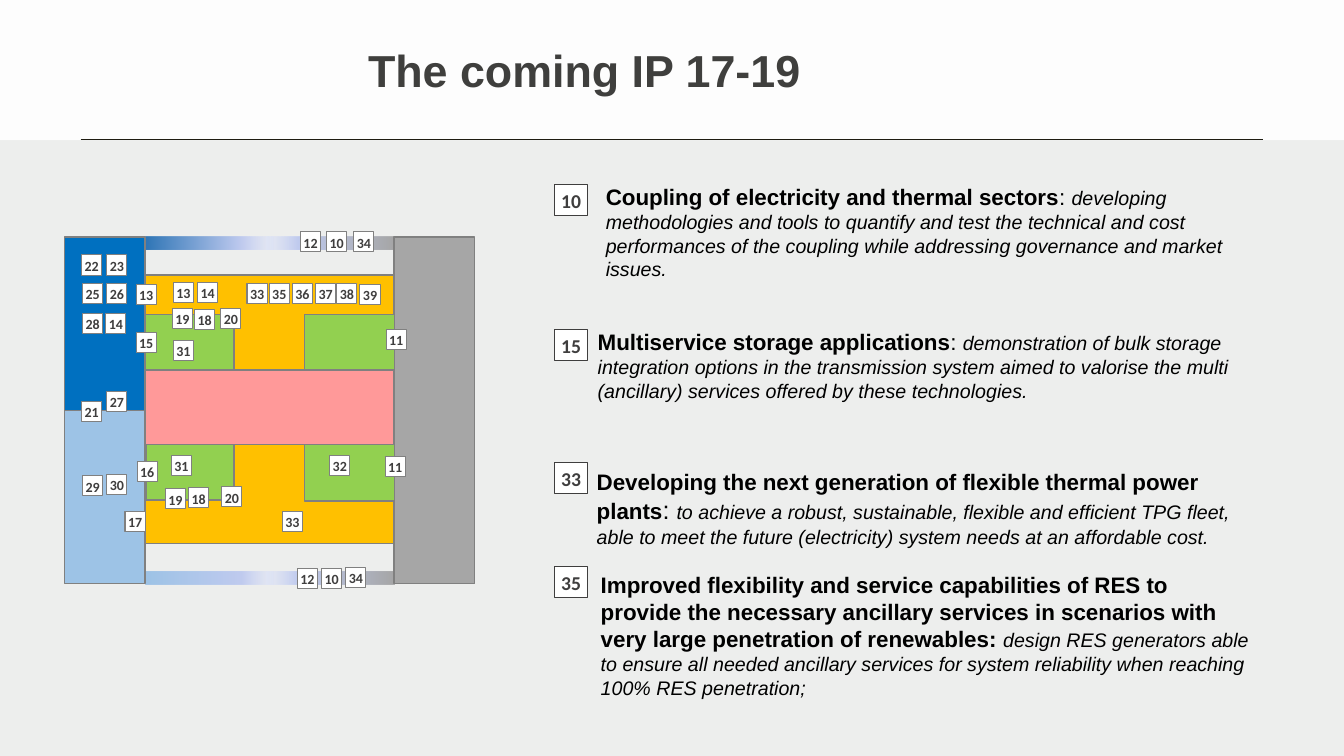
from lxml.etree import SubElement
from pptx import Presentation
from pptx.dml.color import RGBColor
from pptx.enum.shapes import MSO_CONNECTOR as Conn, MSO_SHAPE as Kind
from pptx.enum.text import MSO_ANCHOR as Anchor, MSO_AUTO_SIZE as Fit, PP_ALIGN as Align
from pptx.oxml.ns import qn
from pptx.util import Emu, Pt

SCALE = 9144  # EMU in one px, 100 px to the inch

HUES = {
    "page": "EDEEED", "white": "FFFFFF", "black": "000000", "rule": "1E1C11",
    "title": "3F3F3D", "ink": "3F3E3E", "edge": "808080", "grey": "A6A6A6",
    "blue": "0070C0", "sky": "9DC3E6", "navy": "2E75B6", "amber": "FFC000",
    "pink": "FF9999", "green": "92D050", "mist": "C0CBF0", "haze": "E0E5F7",
}


def px(*nums):
    return [Emu(n * SCALE) for n in nums]


def rgb(hue):
    return RGBColor.from_string(HUES[hue])


class Deck:
    def __init__(self):
        self.prs = Presentation()
        self.prs.slide_width, self.prs.slide_height = px(1333, 750)
        self.slide = self.prs.slides.add_slide(self.prs.slide_layouts[5])
        fill = self.slide.background.fill
        fill.solid()
        fill.fore_color.rgb = rgb("page")

    def box(self, x, y, w, h, hue, edge=None, width=1):
        shape = self.slide.shapes.add_shape(Kind.RECTANGLE, *px(x, y, w, h))
        shape.shadow.inherit = False
        shape.fill.solid()
        shape.fill.fore_color.rgb = rgb(hue)
        if edge:
            shape.line.color.rgb = rgb(edge)
            shape.line.width = Pt(width)
        else:
            shape.line.fill.background()
        return shape

    def band(self, x, y, w, h, hue, alpha):
        shape = self.box(x, y, w, h, hue)
        color = shape._element.spPr.find(f".//{qn('a:srgbClr')}")
        SubElement(color, qn("a:alpha"), val=str(alpha * 1000))

    def fade(self, x, y, w, h, hue, angle):
        """Bar that fades from the hue to a half clear haze."""
        fill = self.box(x, y, w, h, hue).fill
        fill.gradient()
        fill.gradient_angle = angle
        stops = fill._fill._gradFill.find(qn("a:gsLst"))
        for stop in list(stops):
            stops.remove(stop)
        for pos, tone in ((0, hue), (75, "mist"), (100, "haze")):
            stop = SubElement(stops, qn("a:gs"), pos=str(pos * 1000))
            color = SubElement(stop, qn("a:srgbClr"), val=HUES[tone])
        SubElement(color, qn("a:alpha"), val="50000")

    def rule(self, x, y, end):
        line = self.slide.shapes.add_connector(Conn.STRAIGHT, *px(x, y, end, y))
        line.line.color.rgb = rgb("rule")
        line.line.width = Pt(0.5)
        SubElement(line._element.spPr, qn("a:effectLst"))

    def run(self, para, text, size, hue, face="Arial", bold=False, slant=False):
        run = para.add_run()
        run.text = text
        font = run.font
        font.name, font.size, font.bold, font.italic = face, Pt(size), bold, slant
        font.color.rgb = rgb(hue)

    def title(self, x, y, w, h, text):
        """Fill the title placeholder and bring it to the front."""
        shape = self.slide.shapes.title
        shape._element.getparent().append(shape._element)
        shape.left, shape.top, shape.width, shape.height = px(x, y, w, h)
        frame = shape.text_frame
        frame.auto_size = Fit.NONE
        frame.vertical_anchor = Anchor.TOP
        para = frame.paragraphs[0]
        para.alignment, para.line_spacing = Align.LEFT, 0.9
        self.run(para, text, 32, "title", bold=True)

    def tag(self, x, y, w, h, num, size, edge):
        """Small white box with a topic number."""
        frame = self.box(x, y, w, h, "white", edge, 0.75).text_frame
        frame.margin_left = frame.margin_right = 0
        frame.margin_top = frame.margin_bottom = 0
        frame.vertical_anchor = Anchor.MIDDLE
        para = frame.paragraphs[0]
        para.alignment, para.line_spacing = Align.CENTER, 1.07
        para.space_after = Pt(8)
        self.run(para, str(num), size, "ink", "Calibri", bold=True)

    def note(self, x, y, w, h, head, mark, size, body):
        frame = self.slide.shapes.add_textbox(*px(x, y, w, h)).text_frame
        frame.word_wrap = True
        frame.auto_size = Fit.SHAPE_TO_FIT_TEXT
        para = frame.paragraphs[0]
        self.run(para, head, 16, "black", bold=True)
        if mark:
            self.run(para, mark, size, "black")
        self.run(para, body, 14, "black", slant=True)


BARS = [(235, "navy"), (567, "sky")]

BLOCKS = [
    (391, 235, 80, 344, "grey"),
    (64, 235, 80, 172, "blue"), (64, 407, 80, 172, "sky"),
    (144, 273, 247, 98, "amber"), (144, 441, 247, 98, "amber"),
    (144, 367, 247, 74, "pink"),
    (144, 312, 88, 55, "green"), (302, 312, 89, 55, "green"),
    (145, 441, 87, 55, "green"), (302, 441, 89, 56, "green"),
]

# top of the row: (left, number) of each tag
TAGS = {
    230: [(298, 12), (324, 10), (351, 34)],
    253: [(81, 22), (106, 23)],
    280: [(172, 13), (196, 14)],
    281: [(82, 25), (106, 26), (245, 33), (267, 35), (290, 36), (313, 37), (334, 38)],
    282: [(135, 13), (357, 39)],
    306: [(171, 19), (219, 20)],
    307: [(193, 18)],
    311: [(82, 28), (105, 14)],
    327: [(383, 11)],
    330: [(135, 15)],
    338: [(172, 31)],
    388: [(106, 27)],
    398: [(81, 21)],
    452: [(170, 31), (327, 32)],
    453: [(382, 11)],
    458: [(136, 16)],
    471: [(106, 30)],
    472: [(82, 29)],
    483: [(220, 20)],
    484: [(187, 18)],
    485: [(164, 19)],
    507: [(124, 17), (280, 33)],
    563: [(343, 34)],
    564: [(295, 12), (319, 10)],
}

# number, top of its tag, box of the text, head, mark and its size, body
TOPICS = [
    (10, 183, (591, 177, 695, 84), "Coupling of electricity and thermal sectors", ": ", 16,
     "developing methodologies and tools to quantify and test the technical and cost "
     "performances of the coupling while addressing governance and market issues."),
    (15, 327, (583, 321, 667, 84), "Multiservice storage applications", ": ", 16,
     "demonstration of bulk storage integration options in the transmission system aimed "
     "to valorise the multi (ancillary) services offered by these technologies."),
    (33, 459, (582, 459, 667, 91),
     "Developing the next generation of flexible thermal power plants", ": ", 18,
     "to achieve a robust, sustainable, flexible and efficient TPG fleet, able to meet "
     "the future (electricity) system needs at an affordable cost."),
    (35, 562, (586, 562, 667, 138),
     "Improved flexibility and service capabilities of RES to provide the necessary "
     "ancillary services in scenarios with very large penetration of renewables: ", "", 16,
     "design RES generators able to ensure all needed ancillary services for system "
     "reliability when reaching 100% RES penetration;"),
]


def main():
    deck = Deck()
    deck.band(0, 0, 1333, 139, "white", 90)
    deck.rule(80, 138, 1253)
    deck.title(355, 43, 894, 105, "The coming IP 17-19")
    for y, hue in BARS:
        deck.fade(144, y, 127, 13, hue, 0)
        deck.fade(264, y, 127, 13, "grey", 180)
    for block in BLOCKS:
        deck.box(*block, "edge")
    for y, row in TAGS.items():
        for x, num in row:
            deck.tag(x, y, 20, 20, num, 10, "edge")
    for num, y, place, *words in TOPICS:
        deck.tag(550, y, 33, 31, num, 14, "ink")
        deck.note(*place, *words)
    deck.prs.save("out.pptx")


if __name__ == "__main__":
    main()
